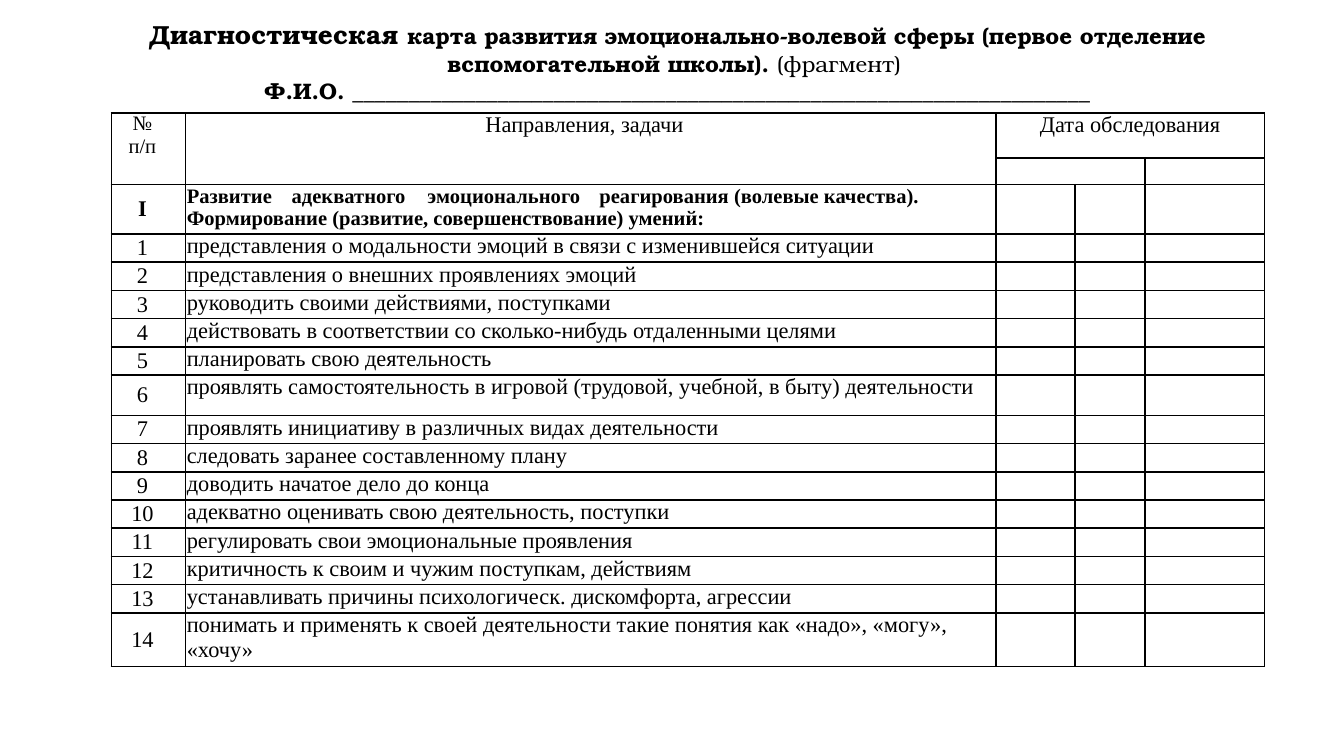
from lxml import etree
from pptx import Presentation
from pptx import util as u
from pptx.dml.color import RGBColor
from pptx.enum import text
from pptx.oxml import ns

BLACK = RGBColor(0, 0, 0)
TITLE_FONT = "TeX Gyre Bonum"
TABLE_FONT = "Times New Roman"

COLUMNS = [0.55, 6.03, 0.59, 0.52, 0.89]
HEADER_ROWS = [0.33, 0.2, 0.33]
TASK_ROW = 0.21
TALL_ROWS = {6: 0.3, 14: 0.3}
SECTION_TABS = [0.78, 1.79, 3.07]
SECTION = ["Развитие\tадекватного\tэмоционального\tреагирования (волевые качества).",
           "Формирование (развитие, совершенствование) умений:"]
TASKS = [
    "представления о модальности эмоций в связи с изменившейся ситуации",
    "представления о внешних проявлениях эмоций",
    "руководить своими действиями, поступками",
    "действовать в соответствии со сколько-нибудь отдаленными целями",
    "планировать свою деятельность",
    "проявлять самостоятельность в игровой (трудовой, учебной, в быту) деятельности",
    "проявлять инициативу в различных видах деятельности",
    "следовать заранее составленному плану",
    "доводить начатое дело до конца",
    "адекватно оценивать свою деятельность, поступки",
    "регулировать свои эмоциональные проявления",
    "критичность к своим и чужим поступкам, действиям",
    "устанавливать причины психологическ. дискомфорта, агрессии",
    "понимать и применять к своей деятельности такие понятия как «надо», «могу», «хочу»",
]


def add_title(page, left, top, width, height):
    box = page.shapes.add_textbox(*map(u.Inches, (left, top, width, height)))
    frame = box.text_frame
    frame.word_wrap = True
    frame.vertical_anchor = text.MSO_ANCHOR.MIDDLE
    para = frame.paragraphs[0]
    para.alignment = text.PP_ALIGN.CENTER
    para.font.name = TITLE_FONT
    para.font.color.rgb = BLACK
    spans = [
        ("Диагностическая ", 14, True),
        ("карта развития эмоционально-волевой сферы "
         "(первое отделение вспомогательной школы). ", 12, True),
        ("(фрагмент) ", 12, False),
        (None, 12, True),
        ("Ф.И.О. " + "_" * 66, 12, True),
    ]
    for words, size, bold in spans:
        if words is None:
            para.add_line_break()
            continue
        span = para.add_run()
        span.text = words
        span.font.size = u.Pt(size)
        span.font.bold = bold


def set_borders(cell, hidden=""):
    """Draw black 1 pt cell edges, except the hidden ones (letters of LRTB)."""
    props = cell._tc.get_or_add_tcPr()
    for place, side in enumerate("LRTB"):
        line = etree.Element(ns.qn(f"a:ln{side}"), w=str(u.Pt(1)))
        if side in hidden:
            etree.SubElement(line, ns.qn("a:noFill"))
        else:
            fill = etree.SubElement(line, ns.qn("a:solidFill"))
            etree.SubElement(fill, ns.qn("a:srgbClr"), val=str(BLACK))
        props.insert(place, line)


def add_tabs(para, stops):
    tabs = etree.SubElement(para._p.get_or_add_pPr(), ns.qn("a:tabLst"))
    for stop in stops:
        etree.SubElement(tabs, ns.qn("a:tab"), pos=str(u.Inches(stop)), algn="l")


def fill_cell(cell, lines, size=12, bold=False, centred=False, middle=False,
              spacing=None, tabs=(), right=0.01):
    frame = cell.text_frame
    frame.text = "\n".join(lines)
    cell.margin_right = u.Inches(right)
    if middle:
        cell.vertical_anchor = text.MSO_ANCHOR.MIDDLE
    for para in frame.paragraphs:
        if centred:
            para.alignment = text.PP_ALIGN.CENTER
        if spacing:
            para.line_spacing = u.Pt(spacing)
        if tabs and "\t" in para.text:
            add_tabs(para, tabs)
        para.font.name = TABLE_FONT
        para.font.size = u.Pt(size)
        para.font.bold = bold
        para.font.color.rgb = BLACK


def add_task_table(page, left, top):
    heights = HEADER_ROWS + [TALL_ROWS.get(number, TASK_ROW)
                             for number in range(1, len(TASKS) + 1)]
    frame = page.shapes.add_table(len(heights), len(COLUMNS), u.Inches(left), u.Inches(top),
                                  u.Inches(sum(COLUMNS)), u.Inches(sum(heights)))
    table = frame.table
    table.first_row = table.horz_banding = False
    for column, width in zip(table.columns, COLUMNS):
        column.width = u.Inches(width)
    for row, height in zip(table.rows, heights):
        row.height = u.Inches(height)

    # Plain cells; the first two columns have no line between the header rows
    for r in range(len(heights)):
        for c in range(len(COLUMNS)):
            cell = table.cell(r, c)
            cell.margin_left = cell.margin_right = u.Inches(0.01)
            cell.margin_top = cell.margin_bottom = 0
            cell.fill.background()
            set_borders(cell, {0: "B", 1: "T"}.get(r, "") if c < 2 else "")
            # Small end mark keeps empty cells from stretching their row
            etree.SubElement(cell.text_frame.paragraphs[0]._p,
                             ns.qn("a:endParaRPr"), sz="1200")

    # Header
    table.cell(0, 2).merge(table.cell(0, 4))
    table.cell(1, 2).merge(table.cell(1, 3))
    number_style = dict(centred=True, middle=True, right=0.1)
    fill_cell(table.cell(0, 0), ["№", "п/п"], 11, spacing=12, **number_style)
    fill_cell(table.cell(0, 1), ["Направления, задачи"], centred=True, right=0.1)
    fill_cell(table.cell(0, 2), ["Дата обследования"], centred=True)

    # Section heading and its numbered tasks
    fill_cell(table.cell(2, 0), ["I"], bold=True, **number_style)
    fill_cell(table.cell(2, 1), SECTION, 11, bold=True, tabs=SECTION_TABS)
    for number, task in enumerate(TASKS, 1):
        r = number + len(HEADER_ROWS) - 1
        fill_cell(table.cell(r, 0), [str(number)], **number_style)
        fill_cell(table.cell(r, 1), [task])


def main():
    deck = Presentation()
    deck.slide_width = u.Inches(10)
    deck.slide_height = deck.slide_width * 9 // 16
    page = deck.slides.add_slide(deck.slide_layouts[6])
    add_title(page, 0.28, 0.14, 9.53, 0.63)
    add_task_table(page, 0.83, 0.84)
    deck.save("out.pptx")


if __name__ == "__main__":
    main()
